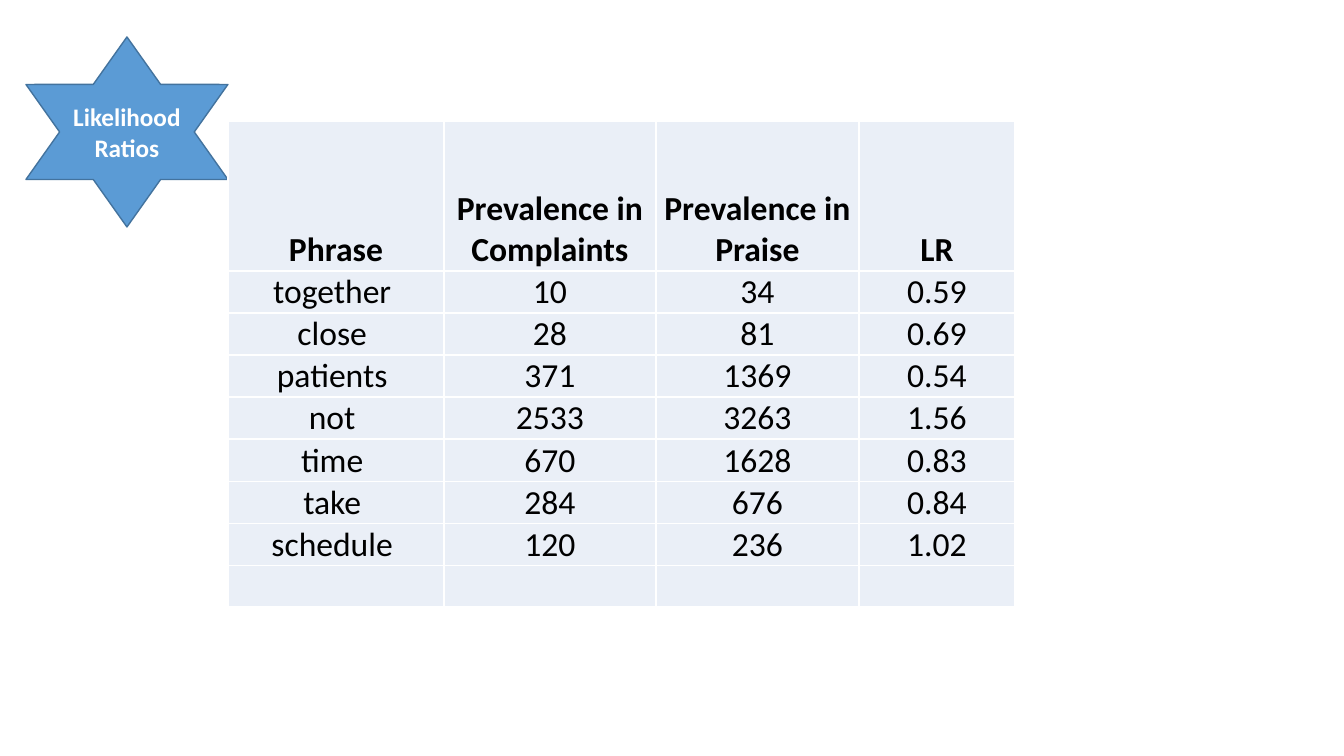
"""Build a slide with a table of phrase likelihood ratios and a star badge."""
from dataclasses import dataclass

from pptx import Presentation
from pptx.dml.color import RGBColor
from pptx.enum.shapes import MSO_SHAPE
from pptx.enum.text import MSO_ANCHOR, PP_ALIGN
from pptx.slide import Slide
from pptx.text.text import TextFrame
from pptx.util import Emu, Pt

STAR = MSO_SHAPE.STAR_6_POINT
MIDDLE = MSO_ANCHOR.MIDDLE
BOTTOM = MSO_ANCHOR.BOTTOM
CENTER = PP_ALIGN.CENTER
BLANK_LAYOUT = 6
SLIDE_WIDTH, SLIDE_HEIGHT = 1344, 756
EMU_PER_PX = 12192000 / SLIDE_WIDTH


@dataclass(frozen=True)
class Theme:
    font: str = "Calibri"
    badge_size: int = 18
    table_size: int = 24
    badge_fill: RGBColor = RGBColor(0x5B, 0x9B, 0xD5)
    badge_line: RGBColor = RGBColor(0x43, 0x73, 0x9E)
    badge_text: RGBColor = RGBColor(0xFF, 0xFF, 0xFF)
    cell_fill: RGBColor = RGBColor(0xEA, 0xEF, 0xF7)
    cell_text: RGBColor = RGBColor(0x00, 0x00, 0x00)


@dataclass(frozen=True)
class Phrase:
    phrase: str
    complaints: str
    praise: str
    ratio: str

    def values(self) -> tuple[str, ...]:
        return self.phrase, self.complaints, self.praise, self.ratio


THEME = Theme()
PHRASES = (
    Phrase("Phrase", "Prevalence in Complaints", "Prevalence in Praise", "LR"),
    Phrase("together ", "10", "34", "0.59"),
    Phrase("close ", "28", "81", "0.69"),
    Phrase("patients ", "371", "1369", "0.54"),
    Phrase("not ", "2533", "3263", "1.56"),
    Phrase("time ", "670", "1628", "0.83"),
    Phrase("take ", "284", "676", "0.84"),
    Phrase("schedule ", "120", "236", "1.02"),
    Phrase("", "", "", ""),
)
COLUMN_WIDTHS = (216, 212, 203, 156)
HEADER_HEIGHT, PHRASE_HEIGHT = 150, 41


def px(length: int) -> Emu:
    return Emu(round(length * EMU_PER_PX))


def write_text(frame: TextFrame, text: str, *, size: int, color: RGBColor, bold: bool) -> None:
    frame.text = text
    for paragraph in frame.paragraphs:
        paragraph.alignment = CENTER
        for run in paragraph.runs:
            run.font.name = THEME.font
            run.font.size = Pt(size)
            run.font.bold = bold
            run.font.color.rgb = color


def draw_badge(slide: Slide, text: str) -> None:
    badge = slide.shapes.add_shape(STAR, px(26), px(37), px(202), px(190))
    badge.shadow.inherit = False
    badge.fill.solid()
    badge.fill.fore_color.rgb = THEME.badge_fill
    badge.line.color.rgb = THEME.badge_line
    badge.line.width = Pt(1)
    badge.text_frame.vertical_anchor = MIDDLE
    write_text(badge.text_frame, text, size=THEME.badge_size, color=THEME.badge_text, bold=True)


def draw_ratios(slide: Slide, phrases: tuple[Phrase, ...]) -> None:
    heights = [HEADER_HEIGHT] + [PHRASE_HEIGHT] * (len(phrases) - 1)
    ratios = slide.shapes.add_table(
        len(phrases), len(COLUMN_WIDTHS), px(228), px(121), px(sum(COLUMN_WIDTHS)), px(sum(heights))
    ).table
    ratios.first_row = False
    ratios.horz_banding = False
    for column, width in zip(ratios.columns, COLUMN_WIDTHS):
        column.width = px(width)
    for index, (row, height, phrase) in enumerate(zip(ratios.rows, heights, phrases)):
        row.height = px(height)
        for cell, value in zip(row.cells, phrase.values()):
            cell.fill.solid()
            cell.fill.fore_color.rgb = THEME.cell_fill
            cell.vertical_anchor = BOTTOM
            cell.margin_left = cell.margin_right = cell.margin_top = px(1)
            cell.margin_bottom = 0
            write_text(
                cell.text_frame, value, size=THEME.table_size, color=THEME.cell_text, bold=index == 0
            )


def main() -> None:
    deck = Presentation()
    deck.slide_width = px(SLIDE_WIDTH)
    deck.slide_height = px(SLIDE_HEIGHT)
    slide = deck.slides.add_slide(deck.slide_layouts[BLANK_LAYOUT])
    draw_badge(slide, "Likelihood\nRatios")
    draw_ratios(slide, PHRASES)
    deck.save("out.pptx")


if __name__ == "__main__":
    main()
